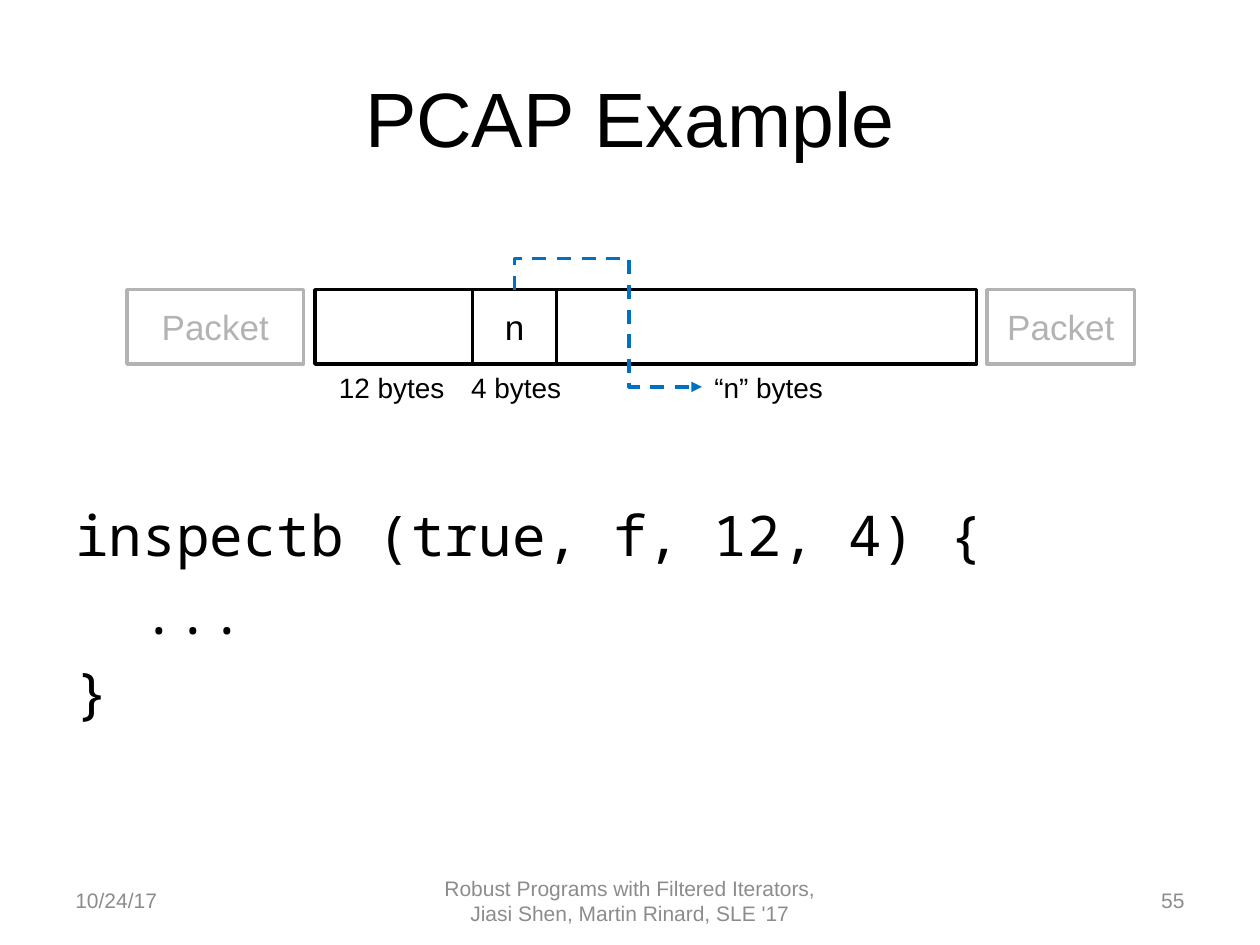
from lxml.etree import SubElement
from pptx import Presentation
from pptx.dml.color import RGBColor
from pptx.enum.dml import MSO_LINE
from pptx.enum.shapes import MSO_CONNECTOR, MSO_SHAPE
from pptx.enum.text import MSO_ANCHOR, PP_ALIGN
from pptx.oxml.ns import qn
from pptx.util import Cm, Pt

BLACK = RGBColor(0, 0, 0)
WHITE = RGBColor(255, 255, 255)
GREY = RGBColor(0x8C, 0x8C, 0x8C)
BLUE = RGBColor(0, 0x70, 0xC0)
LEFT, MID, RIGHT = PP_ALIGN.LEFT, PP_ALIGN.CENTER, PP_ALIGN.RIGHT

# Content: lengths in cm
TITLE = "PCAP Example"
CODE = [("inspectb (true, f, 12, 4) {", 0), ("...", 1.36), ("}", 0)]
FOOT = [  # text, left, width, align
    ("10/24/17", 1.27, 5.93, LEFT),
    ("Robust Programs with Filtered Iterators, Jiasi Shen, Martin Rinard, SLE '17",
     8.68, 8.04, MID),
    ("55", 18.2, 5.93, RIGHT),
]
ROW, HIGH = 5.84, 1.5
CELLS = [  # text, left, width
    ("Packet", 2.56, 3.56),
    ("", 6.35, 13.34),
    ("Packet", 19.9, 2.97),
    ("n", 9.53, 1.69),
]
SIZES = [  # text, left, width
    ("12 bytes", 6.58, 2.67),
    ("4 bytes", 9.25, 2.36),
    ("“n” bytes", 14.15, 2.74),
]
VEILS = [(1.91, 5.49), (19.76, 5.41)]  # left, top
ARROW = {"start": (10.37, 5.84), "end": (14.15, 7.8)}
BENDS = {"adj1": -32200, "adj2": 61200}

deck = Presentation()
deck.slide_width, deck.slide_height = Cm(25.4), Cm(19.05)
slide = deck.slides.add_slide(deck.slide_layouts[6])
shapes = slide.shapes


def style(para, size, color=BLACK, align=LEFT, name="Arial"):
    para.alignment = align
    para.font.color.rgb = color
    for key, val in {"size": Pt(size), "name": name}.items():
        setattr(para.font, key, val)


def label(text, box, size, color=BLACK, align=LEFT,
          anchor=MSO_ANCHOR.MIDDLE, wrap=True):
    frame = shapes.add_textbox(*map(Cm, box)).text_frame
    for key, val in {"word_wrap": wrap, "vertical_anchor": anchor,
                     "text": text}.items():
        setattr(frame, key, val)
    style(frame.paragraphs[0], size, color, align)
    return frame


def block(box):
    rect = shapes.add_shape(MSO_SHAPE.RECTANGLE, *map(Cm, box))
    rect.shadow.inherit = False
    rect.fill.solid()
    rect.fill.fore_color.rgb = WHITE
    return rect


# Title
label(TITLE, (1.27, 0.76, 22.86, 3.18), 44, align=MID)

# Code
frame = label("", (1.27, 9.96, 22.86, 7.06), 32, anchor=MSO_ANCHOR.TOP)
for i, (text, indent) in enumerate(CODE):
    para = frame.add_paragraph() if i else frame.paragraphs[0]
    para.text = text
    style(para, 32, name="Noto Sans Mono")
    props = para._p.get_or_add_pPr()
    props.set("marL", str(Cm(indent)))
    gap = props.get_or_add_spcBef()
    SubElement(gap, qn("a:spcPct")).set("val", "20000")

# Footer
for text, left, width, align in FOOT:
    label(text, (left, 17.65, width, 1.01), 12, GREY, align)

# Packet row
for text, left, width in CELLS:
    cell = block((left, ROW, width, HIGH))
    cell.line.color.rgb = BLACK
    cell.line.width = Pt(2)
    if text:
        cell.text_frame.text = text
        cell.text_frame.vertical_anchor = MSO_ANCHOR.MIDDLE
        style(cell.text_frame.paragraphs[0], 20, align=MID)

# Field sizes
for text, left, width in SIZES:
    label(text, (left, ROW + HIGH, width, 0.94), 16,
          anchor=MSO_ANCHOR.TOP, wrap=False)

# Bent arrow: a quarter turn swaps its width and height about the centre
(x1, y1), (x2, y2) = ARROW["start"], ARROW["end"]
cx, cy = (x1 + x2) / 2, (y1 + y2) / 2
dx, dy = (y2 - y1) / 2, (x2 - x1) / 2
arrow = shapes.add_connector(MSO_CONNECTOR.ELBOW, Cm(cx + dx), Cm(cy - dy),
                             Cm(cx - dx), Cm(cy + dy))
for key, val in {"width": Pt(2), "dash_style": MSO_LINE.DASH}.items():
    setattr(arrow.line, key, val)
arrow.line.color.rgb = BLUE
props = arrow._element.spPr
props.find(qn("a:xfrm")).set("rot", str(270 * 60000))
geom = props.find(qn("a:prstGeom"))
geom.set("prst", "bentConnector4")
bends = geom.find(qn("a:avLst"))
for key, val in BENDS.items():
    guide = SubElement(bends, qn("a:gd"))
    guide.set("name", key)
    guide.set("fmla", f"val {val}")
SubElement(props.find(qn("a:ln")), qn("a:tailEnd")).set("type", "triangle")
SubElement(props, qn("a:effectLst"))

# Veils that fade the outer packets
for left, top in VEILS:
    veil = block((left, top, 4.28, 2.34))
    veil.line.fill.background()
    color = veil._element.spPr.find(qn("a:solidFill"))[0]
    SubElement(color, qn("a:alpha")).set("val", "70000")

deck.save("out.pptx")
